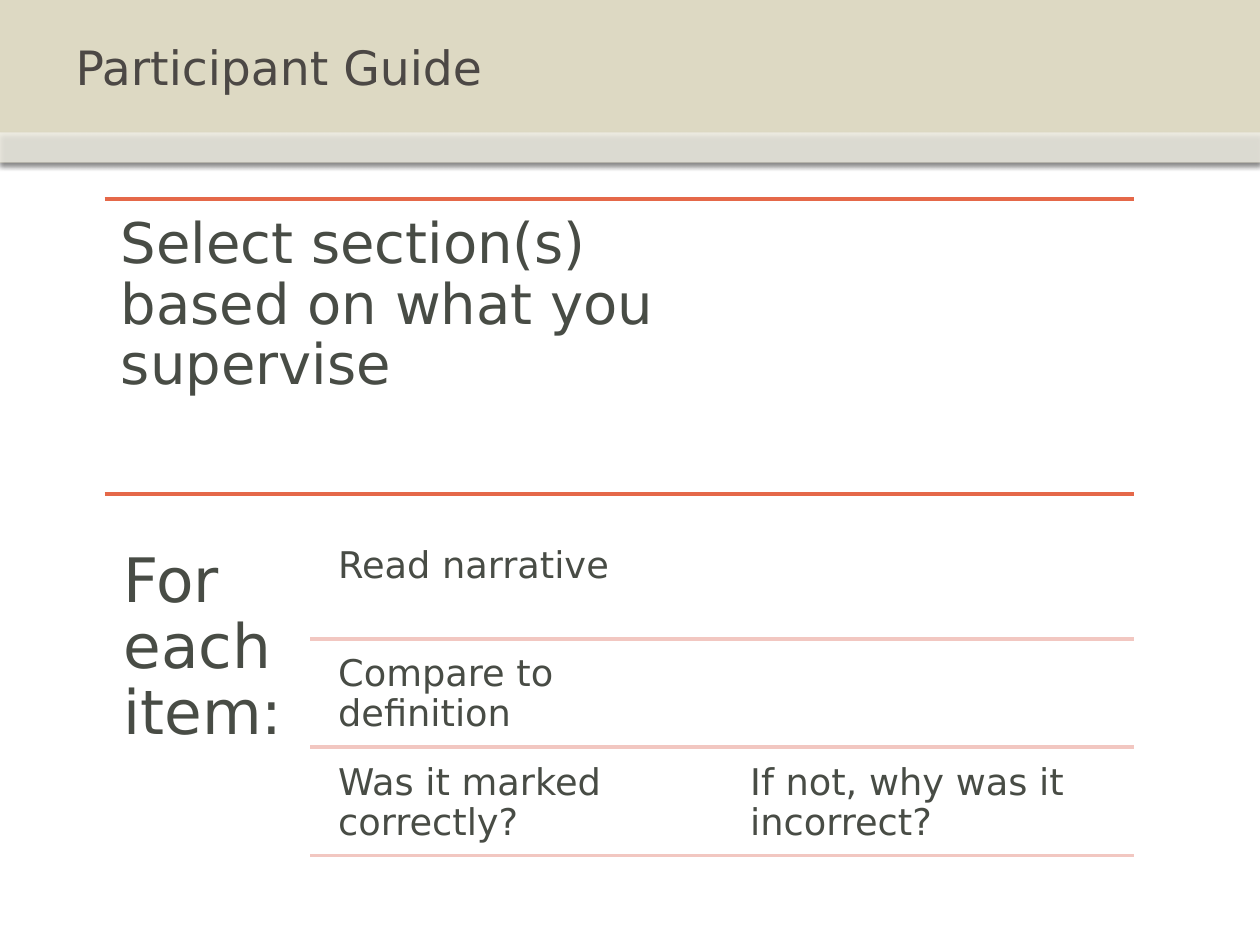
"""Build the Participant Guide slide: one instruction above a three-step table of work."""
from dataclasses import dataclass

from lxml import etree
from pptx import Presentation
from pptx import util as u
from pptx.dml import color
from pptx.enum import shapes, text
from pptx.oxml import ns


@dataclass(frozen=True)
class Theme:
    font: str = "DejaVu Sans"
    title: str = "4C4845"
    ink: str = "484C45"
    band: str = "DDD9C3"
    strip: str = "FFFFFF"
    rule: str = "E56849"
    step_rule: str = "F2C7C1"
    rule_width: float = 2
    title_size: int = 27
    intro_size: int = 32
    label_size: int = 35
    step_size: int = 21


THEME = Theme()
TITLE = "Participant Guide"
INTRO = "Select section(s) based on what you supervise"
LABEL = "For each item:"
STEPS = [
    ["Read narrative"],
    ["Compare to definition"],
    ["Was it marked correctly?", "If not, why was it incorrect?"],
]

WIDTH, HEIGHT = 10, 7.5
HEADER, STRIP = 1.29, 0.24
LEFT, RIGHT = 0.83, 9
TOP, MIDDLE = 1.58, 3.92
LABEL_TOP, SECTION_HEIGHT = 4.21, 2.62
INTRO_WIDTH = 5.2
LABEL_WIDTH = (RIGHT - LEFT) / 5
STEP_LEFT = LEFT + LABEL_WIDTH
STEP_TOP, STEP_HEIGHT, STEP_GAP = 4.25, 0.82, 0.04
CELL_WIDTH, CELL_GAP = 3.14, 0.13


def child(parent, tag, **attributes):
    return etree.SubElement(parent, ns.qn(tag), {k: str(v) for k, v in attributes.items()})


def write(box, words, *, size, ink=THEME.ink, inset=None, spacing=None,
          anchor=text.MSO_ANCHOR.TOP):
    frame = box.text_frame
    frame.word_wrap = True
    frame.auto_size = text.MSO_AUTO_SIZE.NONE
    frame.vertical_anchor = anchor
    if inset is not None:
        frame.margin_left = frame.margin_right = u.Inches(inset)
        frame.margin_top = frame.margin_bottom = u.Inches(inset)
    para = frame.paragraphs[0]
    para.alignment = text.PP_ALIGN.LEFT
    para.line_spacing = spacing
    span = para.add_run()
    span.text = words
    span.font.name = THEME.font
    span.font.size = u.Pt(size)
    span.font.color.rgb = color.RGBColor.from_string(ink)


def add_text(page, words, left, top, width, height, **style):
    box = page.shapes.add_textbox(*map(u.Inches, (left, top, width, height)))
    write(box, words, spacing=0.9, **style)


def add_rule(page, left, top, ink):
    rule = page.shapes.add_connector(
        shapes.MSO_CONNECTOR.STRAIGHT, *map(u.Inches, (left, top, RIGHT, top)))
    rule.line.color.rgb = color.RGBColor.from_string(ink)
    rule.line.width = u.Pt(THEME.rule_width)
    child(rule._element.spPr, "a:effectLst")


def add_band(page, top, height, fill, position, opacity=100):
    band = page.shapes.add_shape(
        shapes.MSO_SHAPE.RECTANGLE, *map(u.Inches, (0, top, WIDTH, height)))
    band.fill.solid()
    band.fill.fore_color.rgb = color.RGBColor.from_string(fill)
    band.line.fill.background()
    properties = band._element.spPr
    if opacity < 100:
        child(properties.find(".//" + ns.qn("a:srgbClr")), "a:alpha", val=opacity * 1000)
    effects = child(properties, "a:effectLst")
    shadow = child(effects, "a:outerShdw", blurRad=u.Pt(3.1), dist=u.Pt(1.8),
                   dir=90 * 60000, rotWithShape=0)
    child(child(shadow, "a:srgbClr", val="000000"), "a:alpha", val=35000)
    page.shapes._spTree.insert(position, band._element)


def add_steps(page):
    for row, cells in enumerate(STEPS):
        top = STEP_TOP + row * (STEP_HEIGHT + STEP_GAP)
        for column, words in enumerate(cells):
            left = STEP_LEFT + CELL_GAP + column * (CELL_WIDTH + CELL_GAP)
            add_text(page, words, left, top, CELL_WIDTH, STEP_HEIGHT,
                     size=THEME.step_size, inset=0.09)
        add_rule(page, STEP_LEFT, top + STEP_HEIGHT, THEME.step_rule)


def main():
    deck = Presentation()
    deck.slide_width, deck.slide_height = u.Inches(WIDTH), u.Inches(HEIGHT)
    page = deck.slides.add_slide(deck.slide_layouts.get_by_name("Title Only"))

    add_band(page, 0, HEADER, THEME.band, position=2)
    add_band(page, HEADER - STRIP, STRIP, THEME.strip, position=3, opacity=53)
    title = page.shapes.title
    title.left, title.top, title.width, title.height = map(
        u.Inches, (0.5, 0, WIDTH - 1, HEADER - STRIP))
    write(title, TITLE, size=THEME.title_size, ink=THEME.title,
          anchor=text.MSO_ANCHOR.MIDDLE)

    add_rule(page, LEFT, TOP, THEME.rule)
    add_text(page, INTRO, LEFT, TOP, INTRO_WIDTH, SECTION_HEIGHT,
             size=THEME.intro_size, inset=0.13)
    add_rule(page, LEFT, MIDDLE, THEME.rule)
    add_text(page, LABEL, LEFT, LABEL_TOP, LABEL_WIDTH, SECTION_HEIGHT,
             size=THEME.label_size, inset=0.15)
    add_steps(page)
    deck.save("out.pptx")


if __name__ == "__main__":
    main()
